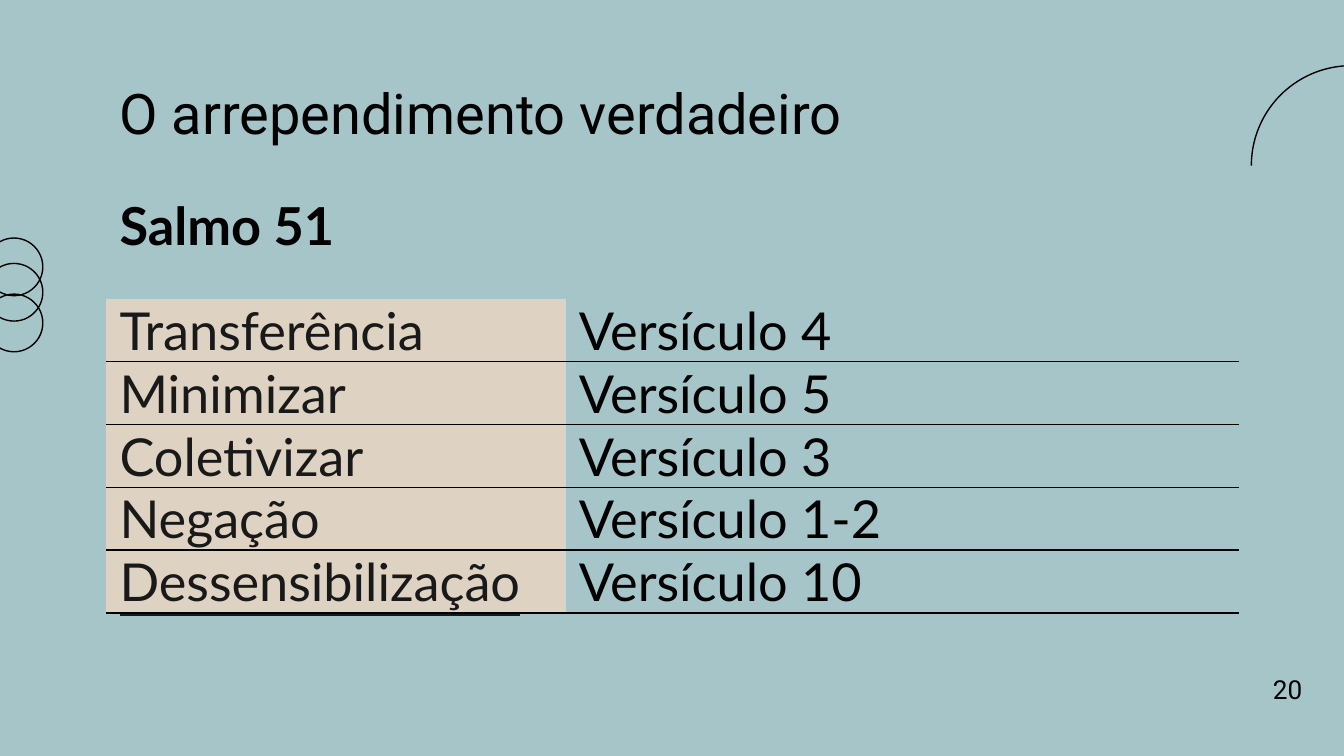
from lxml import etree
from pptx import Presentation
from pptx import util as u
from pptx.dml import color
from pptx.enum import shapes, text
from pptx.oxml import ns

BACKGROUND, SAND, BLACK, CHARCOAL = "A6C5C9", "DED3C2", "000000", "191919"
NO_STYLE = "{2D5ABB26-0587-4C30-8999-92F81FD0307C}"
LEFT, WIDTH = 2.01, 21.41
HEADING = {"name": "Roboto", "size": u.Pt(30), "bold": False}
SUBHEADING = {"name": "Lato", "size": u.Pt(28), "bold": True}
ENTRY = {"name": "Lato", "size": u.Pt(28), "bold": False}
NUMBER = {"name": "Roboto", "size": u.Pt(14), "bold": False}
VERSES = [
    ("Transferência", "Versículo 4"),
    ("Minimizar", "Versículo 5"),
    ("Coletivizar", "Versículo 3"),
    ("Negação", "Versículo 1-2"),
    ("Dessensibilização", "Versículo 10"),
]


def rgb(code):
    return color.RGBColor.from_string(code)


def paint(fill, code):
    fill.solid()
    fill.fore_color.rgb = rgb(code)


def set_attributes(target, values):
    for name, value in values.items():
        setattr(target, name, value)


def place(shape, left, top, width, height):
    box = {"left": left, "top": top, "width": width, "height": height}
    set_attributes(shape, {side: u.Cm(length) for side, length in box.items()})


def write(frame, words, style, code=BLACK, align=text.PP_ALIGN.LEFT, spacing=1.0):
    paragraph = frame.paragraphs[0]
    set_attributes(paragraph, {
        "alignment": align,
        "line_spacing": spacing,
        "space_before": u.Pt(0),
    })
    run = paragraph.add_run()
    run.text = words
    set_attributes(run.font, style)
    run.font.color.rgb = rgb(code)
    return paragraph, run


def fill_text_box(shape, box, words, style, **options):
    place(shape, *box)
    inset = u.Cm(0.25)
    set_attributes(shape.text_frame, {
        "word_wrap": True,
        "auto_size": text.MSO_AUTO_SIZE.NONE,
        "vertical_anchor": text.MSO_ANCHOR.TOP,
        "margin_left": inset,
        "margin_right": inset,
        "margin_top": inset,
        "margin_bottom": inset,
    })
    return write(shape.text_frame, words, style, **options)


def remove_bullet(paragraph):
    properties = paragraph._p.get_or_add_pPr()
    properties.set("marL", "0")
    properties.set("indent", "0")
    etree.SubElement(properties, ns.qn("a:buNone"))


def add_outline(slide, kind, left, top, size, rotation=0):
    outline = slide.shapes.add_shape(
        kind, u.Cm(left), u.Cm(top), u.Cm(size), u.Cm(size))
    outline.rotation = rotation
    outline.shadow.inherit = False
    outline.fill.background()
    outline.line.color.rgb = rgb(BLACK)
    outline.line.width = u.Pt(0.75)


def rule_below(cell):
    rule = etree.Element(ns.qn("a:lnB"), w=str(u.Pt(0.75)))
    solid = etree.SubElement(rule, ns.qn("a:solidFill"))
    etree.SubElement(solid, ns.qn("a:srgbClr"), val=BLACK)
    cell._tc.get_or_add_tcPr().insert(0, rule)


def fill_cell(cell, words, is_label):
    set_attributes(cell, {
        "vertical_anchor": text.MSO_ANCHOR.MIDDLE,
        "margin_left": u.Cm(0.25),
        "margin_right": u.Cm(0.25),
        "margin_top": 0,
        "margin_bottom": 0,
    })
    run = write(cell.text_frame, words, ENTRY, CHARCOAL if is_label else BLACK)[1]
    run.font.underline = is_label
    if is_label:
        paint(cell.fill, SAND)
    else:
        cell.fill.background()
    rule_below(cell)


def add_verse_table(slide):
    row_height = 1.18
    table = slide.shapes.add_table(
        len(VERSES), 2, u.Cm(LEFT), u.Cm(5.65),
        u.Cm(WIDTH), u.Cm(row_height * len(VERSES))).table
    set_attributes(table, {"first_row": False, "horz_banding": False})
    table._tbl.tblPr.find(ns.qn("a:tableStyleId")).text = NO_STYLE
    label_width = 8.68
    for column, width in zip(table.columns, (label_width, WIDTH - label_width)):
        column.width = u.Cm(width)
    for row, entries in zip(table.rows, VERSES):
        row.height = u.Cm(row_height)
        for index, words in enumerate(entries):
            fill_cell(row.cells[index], words, index == 0)


def main():
    deck = Presentation()
    deck.slide_width, deck.slide_height = u.Cm(25.4), u.Cm(14.29)
    slide = deck.slides.add_slide(deck.slide_layouts[1])
    paint(slide.background.fill, BACKGROUND)

    for top in (4.5, 4.98, 5.56):
        add_outline(slide, shapes.MSO_SHAPE.OVAL, -0.28, top, 1.09)
    add_outline(slide, shapes.MSO_SHAPE.ARC, 23.65, 1.24, 3.78, rotation=270)

    title, body = slide.placeholders
    fill_text_box(title, (LEFT, 1.24, WIDTH, 1.6),
                  "O arrependimento verdadeiro", HEADING)
    psalm = fill_text_box(body, (LEFT, 3.4, WIDTH, 1.09), "Salmo 51", SUBHEADING)[0]
    remove_bullet(psalm)

    page_number = slide.shapes.add_textbox(0, 0, 0, 0)
    fill_text_box(page_number, (23.52, 12.55, 1.63, 1.09), "20", NUMBER,
                  align=text.PP_ALIGN.CENTER, spacing=0.9)
    add_verse_table(slide)
    deck.save("out.pptx")


if __name__ == "__main__":
    main()
